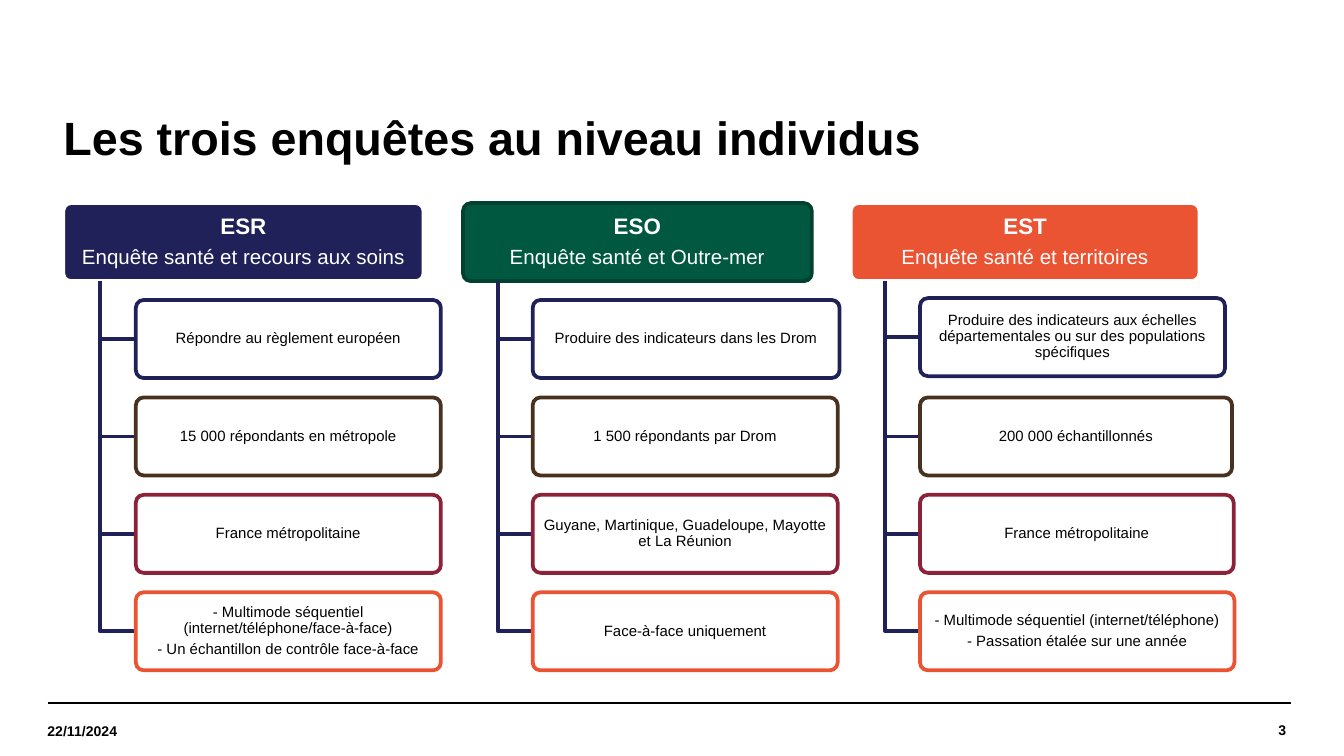
from lxml.etree import SubElement
from pptx import Presentation
from pptx.dml.color import RGBColor
from pptx.enum.shapes import MSO_CONNECTOR, MSO_SHAPE
from pptx.enum.text import MSO_ANCHOR, PP_ALIGN
from pptx.oxml.ns import qn
from pptx.util import Pt

BLACK = RGBColor(0x00, 0x00, 0x00)
WHITE = RGBColor(0xFF, 0xFF, 0xFF)
NAVY = RGBColor(0x21, 0x21, 0x5A)
BROWN = RGBColor(0x49, 0x31, 0x1F)
BURGUNDY = RGBColor(0x8C, 0x22, 0x37)
ORANGE = RGBColor(0xEA, 0x54, 0x33)
GREEN = RGBColor(0x00, 0x58, 0x41)
DARK_GREEN = RGBColor(0x00, 0x41, 0x30)

BOX_HEIGHT = 41.8
HEADER_TOP = 108.8
TRUNK_TOP = 150.5
CARD_TOP = 160.7
CARD_PITCH = 52.2
CARD_COLORS = [NAVY, BROWN, BURGUNDY, ORANGE]

TITLE = {"size": Pt(25), "bold": True}
FOOTER = {"size": Pt(7.5), "bold": True}
ACRONYM = {"size": Pt(12), "bold": True}
SURVEY_NAME = {"size": Pt(11), "bold": False}
CARD = {"size": Pt(8), "bold": False}

SURVEYS = [
    {
        "acronym": "ESR", "name": "Enquête santé et recours aux soins",
        "left": 33.9, "width": 193, "fill": NAVY, "line": WHITE,
        "trunk": 53.5, "card_left": 72.8, "first_shift": 0,
        "cards": [
            (163.4, ["Répondre au règlement européen"]),
            (163.4, ["15 000 répondants en métropole"]),
            (163.4, ["France métropolitaine"]),
            (163.4, ["- Multimode séquentiel (internet/téléphone/face-à-face)",
                     "- Un échantillon de contrôle face-à-face"]),
        ],
    },
    {
        "acronym": "ESO", "name": "Enquête santé et Outre-mer",
        "left": 248.1, "width": 186.8, "fill": GREEN, "line": DARK_GREEN,
        "trunk": 266.7, "card_left": 285.4, "first_shift": 0,
        "cards": [
            (164.4, ["Produire des indicateurs dans les Drom"]),
            (163.4, ["1 500 répondants par Drom"]),
            (163.4, ["Guyane, Martinique, Guadeloupe, Mayotte et La Réunion"]),
            (163.4, ["Face-à-face uniquement"]),
        ],
    },
    {
        "acronym": "EST", "name": "Enquête santé et territoires",
        "left": 455.8, "width": 186.8, "fill": ORANGE, "line": WHITE,
        "trunk": 474.3, "card_left": 492.9, "first_shift": -1,
        "cards": [
            (163.4, ["Produire des indicateurs aux échelles départementales "
                     "ou sur des populations spécifiques"]),
            (167.2, ["200 000 échantillonnés"]),
            (168, ["France métropolitaine"]),
            (168.4, ["- Multimode séquentiel (internet/téléphone)",
                     "- Passation étalée sur une année"]),
        ],
    },
]


def apply_format(target, values):
    for name, value in values.items():
        setattr(target, name, value)


def write_text(shape, lines, color, align, margins, spacing=0.9, after=0.35):
    horizontal, vertical = margins
    frame = shape.text_frame
    apply_format(frame, {
        "word_wrap": True, "vertical_anchor": MSO_ANCHOR.MIDDLE,
        "margin_left": Pt(horizontal), "margin_right": Pt(horizontal),
        "margin_top": Pt(vertical), "margin_bottom": Pt(vertical),
    })
    for index, (text, font_format) in enumerate(lines):
        paragraph = frame.add_paragraph() if index else frame.paragraphs[0]
        apply_format(paragraph, {
            "alignment": align, "line_spacing": spacing,
            "space_before": Pt(0),
            "space_after": Pt(font_format["size"].pt * after),
        })
        run = paragraph.add_run()
        run.text = text
        apply_format(run.font, {"name": "Arial", **font_format})
        run.font.color.rgb = color


def add_label(slide, box, text, font_format, align, margins=(0, 0), spacing=1):
    shape = slide.shapes.add_textbox(*map(Pt, box))
    write_text(shape, [(text, font_format)], BLACK, align, margins, spacing, 0)


def add_box(slide, left, top, width, fill, line):
    shape = slide.shapes.add_shape(
        MSO_SHAPE.ROUNDED_RECTANGLE,
        Pt(left), Pt(top), Pt(width), Pt(BOX_HEIGHT))
    shape.adjustments[0] = 0.1
    shape.shadow.inherit = False
    shape.fill.solid()
    shape.fill.fore_color.rgb = fill
    shape.line.color.rgb = line
    shape.line.width = Pt(2)
    return shape


def add_branch(slide, trunk, card_left, middle):
    builder = slide.shapes.build_freeform(Pt(trunk), Pt(TRUNK_TOP))
    builder.add_line_segments(
        [(Pt(trunk), Pt(middle)), (Pt(card_left), Pt(middle))], close=False)
    shape = builder.convert_to_shape()
    shape.shadow.inherit = False
    shape.fill.background()
    shape.line.color.rgb = NAVY
    shape.line.width = Pt(2)


def add_survey(slide, survey):
    header = add_box(slide, survey["left"], HEADER_TOP, survey["width"],
                     survey["fill"], survey["line"])
    write_text(header,
               [(survey["acronym"], ACRONYM), (survey["name"], SURVEY_NAME)],
               WHITE, PP_ALIGN.CENTER, (2.2, 1.4))
    card_left = survey["card_left"]
    for row, (width, texts) in enumerate(survey["cards"]):
        shift = 0 if row else survey["first_shift"]
        top = CARD_TOP + row * CARD_PITCH + shift
        add_branch(slide, survey["trunk"], card_left, top + BOX_HEIGHT / 2)
        card = add_box(slide, card_left, top, width, WHITE, CARD_COLORS[row])
        write_text(card, [(text, CARD) for text in texts],
                   BLACK, PP_ALIGN.CENTER, (1.4, 1))


def add_footer_line(slide):
    connector = slide.shapes.add_connector(
        MSO_CONNECTOR.STRAIGHT, Pt(25.5), Pt(376.6), Pt(691.8), Pt(376.6))
    connector.line.color.rgb = BLACK
    connector.line.width = Pt(0.8)
    SubElement(connector._element.spPr, qn("a:effectLst"))


def main():
    presentation = Presentation()
    presentation.slide_width = Pt(720)
    presentation.slide_height = Pt(405)
    slide = presentation.slides.add_slide(presentation.slide_layouts[6])
    add_footer_line(slide)
    add_label(slide, (582.5, 376.8, 106.5, 28), "3", FOOTER, PP_ALIGN.RIGHT)
    add_label(slide, (25.4, 378, 92, 27.4), "22/11/2024", FOOTER, PP_ALIGN.LEFT)
    add_label(slide, (25.4, 54, 663, 42.5),
              "Les trois enquêtes au niveau individus",
              TITLE, PP_ALIGN.LEFT, (8.6, 3.6), 0.9)
    for survey in SURVEYS:
        add_survey(slide, survey)
    presentation.save("out.pptx")


if __name__ == "__main__":
    main()
